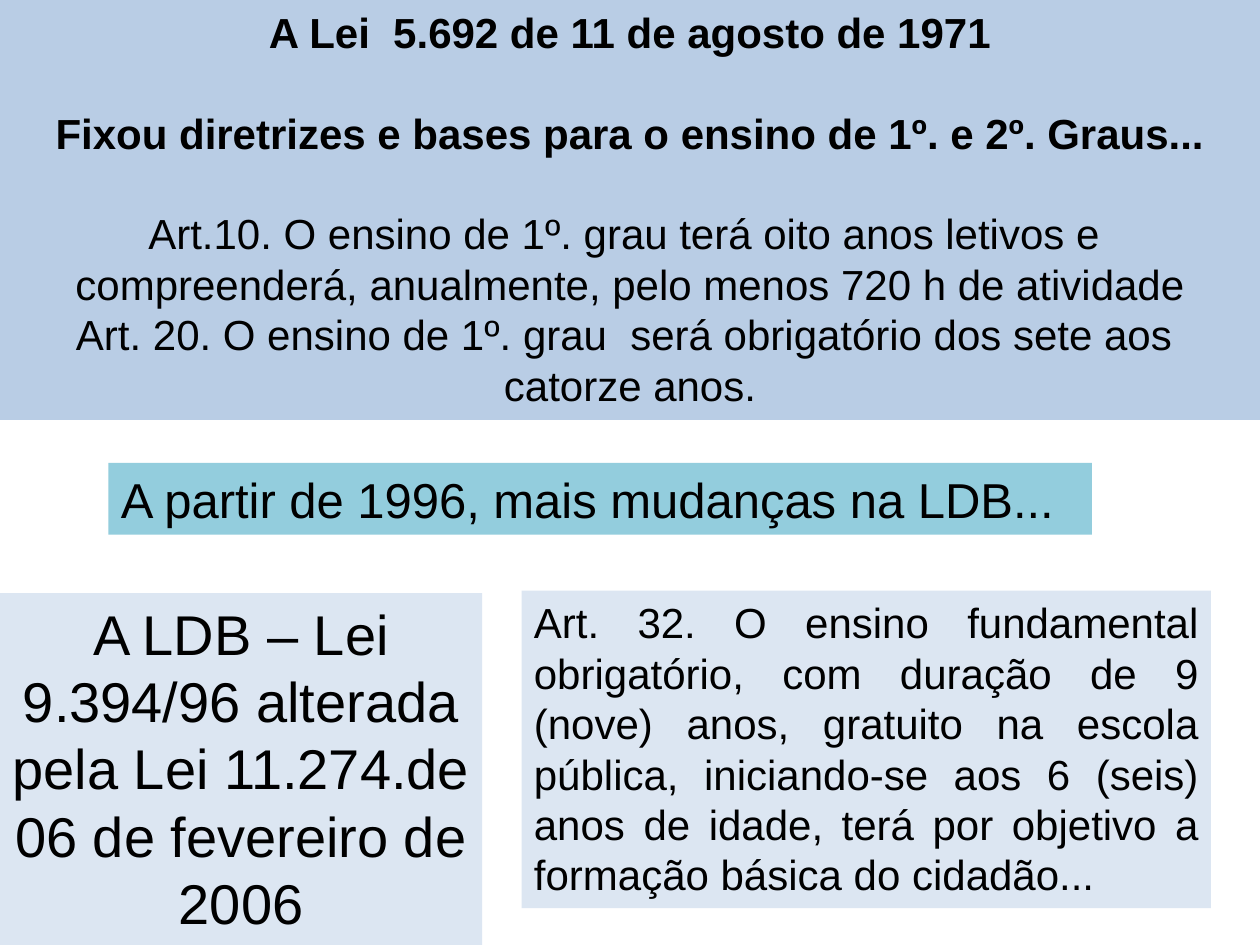
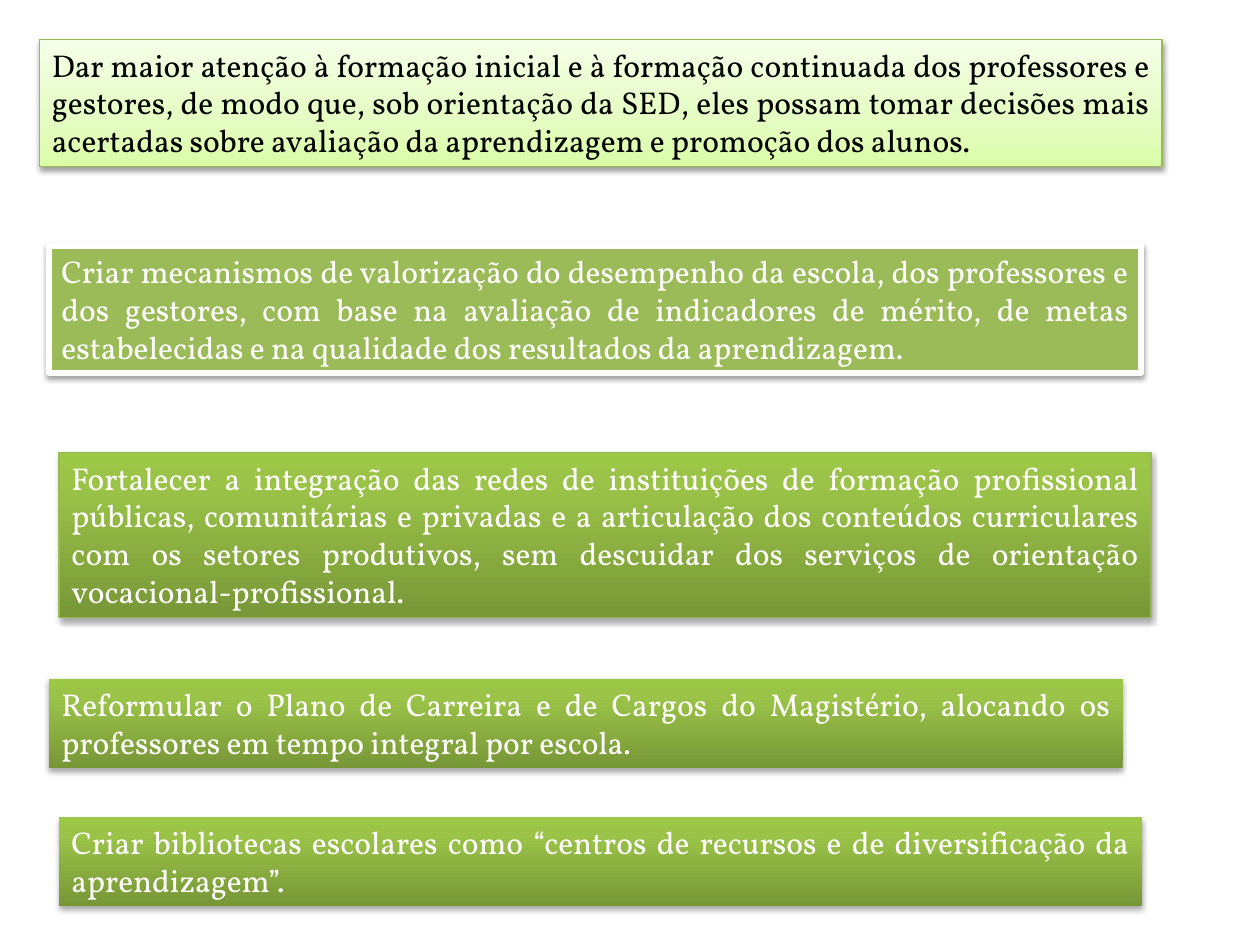
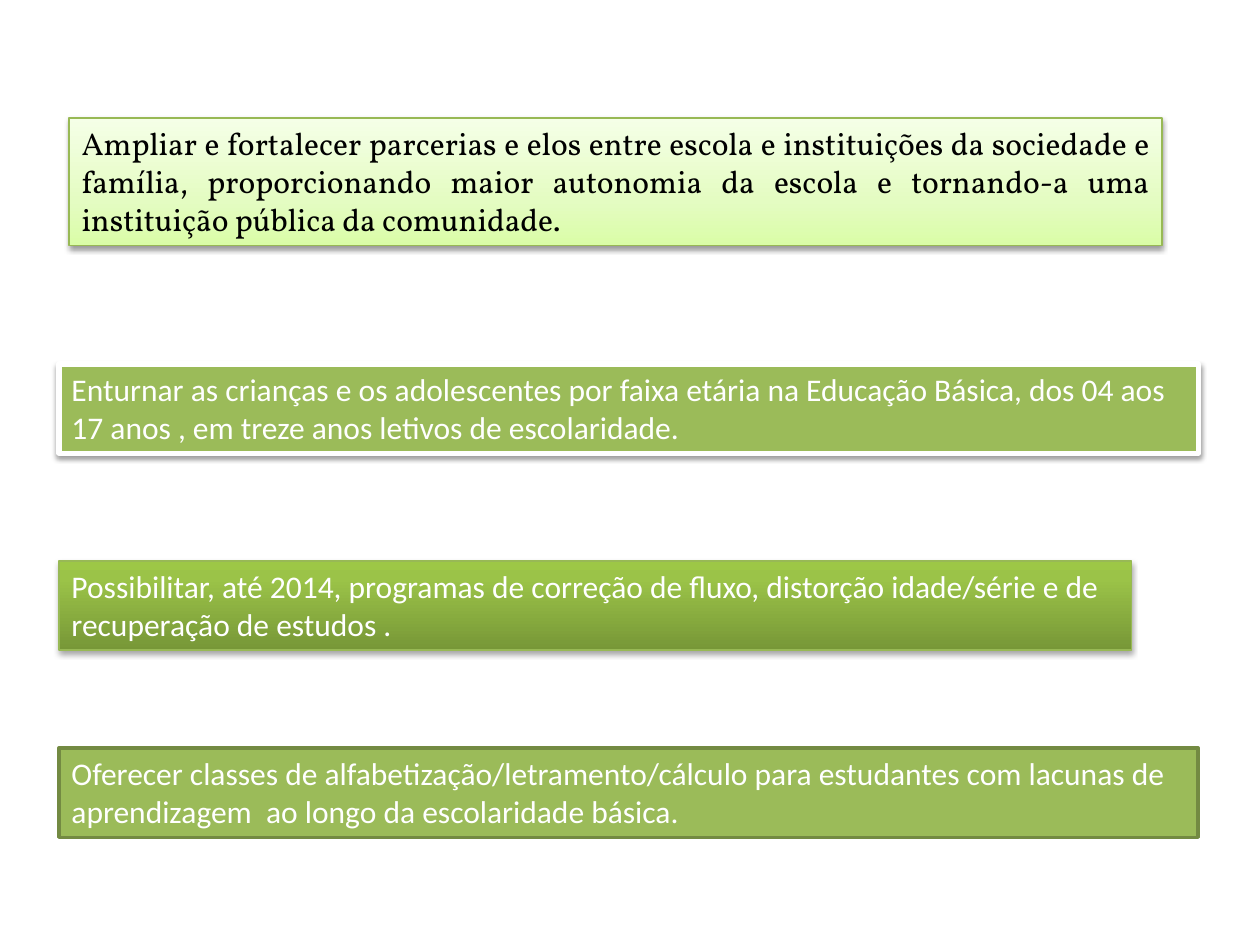
"""Builds three slides on Brazilian school law and education policy proposals."""
from lxml.etree import SubElement
from pptx import Presentation
from pptx.dml.color import RGBColor
from pptx.enum.text import MSO_ANCHOR, MSO_AUTO_SIZE, PP_ALIGN
from pptx.oxml.ns import qn
from pptx.util import Pt

BLACK, WHITE = "000000", "FFFFFF"
BLUE, PALE_BLUE, AQUA = "B9CDE5", "DCE6F2", "93CDDD"
GREEN, GREEN_EDGE, DARK_GREEN = "9BBB59", "98B955", "738A42"
LIGHT_FADE = [(0, "DAFDA7"), (35, "E4FCC2"), (100, "F5FFE7")]
DEEP_FADE = [(0, "779737"), (80, "9BC348"), (100, "9DC746")]
SOFT_SHADOW, STRONG_SHADOW = (38, 1.6), (35, 1.8)

PALE = dict(fill=LIGHT_FADE, line=(GREEN_EDGE, 0.75), shadow=SOFT_SHADOW, color=BLACK)
FRAMED = dict(fill=GREEN, line=(WHITE, 3), shadow=SOFT_SHADOW, color=WHITE)
DEEP = dict(fill=DEEP_FADE, shadow=STRONG_SHADOW, color=WHITE)
DEEP_EDGED = dict(DEEP, line=(GREEN_EDGE, 0.75))
OUTLINED = dict(fill=GREEN, line=(DARK_GREEN, 2), color=WHITE)


def rgb(hex_color):
    """Turn a hex string into a colour."""
    return RGBColor.from_string(hex_color)


class Deck:
    """Holds the presentation, its shared style and the current slide."""

    def __init__(self):
        """Start an empty 4:3 presentation."""
        self.presentation = Presentation()
        self.presentation.slide_width = Pt(720)
        self.presentation.slide_height = Pt(540)
        self.slide = None

    def new_slide(self):
        """Add a blank slide and make it current."""
        self.slide = self.presentation.slides.add_slide(self.presentation.slide_layouts[6])

    def panel(self, place, fill, line=None, shadow=None, wrap=True):
        """Add a filled text panel and return its text frame."""
        panel = self.slide.shapes.add_textbox(*map(Pt, place))
        if isinstance(fill, str):
            panel.fill.solid()
            panel.fill.fore_color.rgb = rgb(fill)
        else:
            self.fade(panel, fill)
        if line:
            panel.line.color.rgb = rgb(line[0])
            panel.line.width = Pt(line[1])
        if shadow:
            self.cast_shadow(panel, *shadow)
        frame = panel.text_frame
        frame.word_wrap = wrap
        frame.auto_size = MSO_AUTO_SIZE.SHAPE_TO_FIT_TEXT
        frame.vertical_anchor = MSO_ANCHOR.TOP
        return frame

    def fade(self, panel, stops):
        """Fill a panel with a gradient that runs from bottom to top."""
        panel.fill.gradient()
        panel.fill.gradient_angle = 90
        stop_list = panel._element.spPr.find(qn("a:gradFill")).find(qn("a:gsLst"))
        for default_stop in list(stop_list):
            stop_list.remove(default_stop)
        for percent, color in stops:
            stop = SubElement(stop_list, qn("a:gs"), pos=str(percent * 1000))
            SubElement(stop, qn("a:srgbClr"), val=color)

    def cast_shadow(self, panel, opacity, distance):
        """Give a panel a soft shadow straight below it."""
        effects = SubElement(panel._element.spPr, qn("a:effectLst"))
        outer = SubElement(effects, qn("a:outerShdw"), blurRad=str(Pt(3.1)),
                           dist=str(Pt(distance)), dir="5400000", rotWithShape="0")
        color = SubElement(outer, qn("a:srgbClr"), val=BLACK)
        SubElement(color, qn("a:alpha"), val=str(opacity * 1000))

    def add_lines(self, frame, lines, size, font="Arial", color=BLACK,
                  align=PP_ALIGN.LEFT, bold_lines=0, gaps=()):
        """Add one paragraph per line, with a line's gap before the chosen ones."""
        for index, words in enumerate(lines):
            paragraph = frame.paragraphs[0] if index == 0 else frame.add_paragraph()
            paragraph.alignment = align
            if index in gaps:
                paragraph.space_before = Pt(size * 1.2)
            run = paragraph.add_run()
            run.text = words
            run.font.size = Pt(size)
            run.font.name = font
            run.font.bold = index < bold_lines
            run.font.color.rgb = rgb(color)

    def proposal(self, place, look, *lines):
        """Add a proposal: one justified paragraph, or lines broken by hand."""
        style = dict(look)
        color = style.pop("color")
        single = len(lines) == 1
        frame = self.panel(place, wrap=single, **style)
        self.add_lines(frame, lines, 18, "Vollkorn" if single else "Calibri", color,
                       PP_ALIGN.JUSTIFY if single else PP_ALIGN.LEFT)


def add_laws(deck):
    """Compare the 1971 law with the changes made since 1996."""
    deck.new_slide()
    law_1971 = deck.panel((0, 0, 720, 240), BLUE)
    deck.add_lines(law_1971, [
        "A Lei  5.692 de 11 de agosto de 1971",
        "Fixou diretrizes e bases para o ensino de 1º. e 2º. Graus...",
        "Art.10. O ensino de 1º. grau terá oito anos letivos e ",
        "compreenderá, anualmente, pelo menos 720 h de atividade",
        "Art. 20. O ensino de 1º. grau  será obrigatório dos sete aos ",
        "catorze anos.",
    ], 24, align=PP_ALIGN.CENTER, bold_lines=2, gaps=(1, 2))
    ldb = deck.panel((0, 339, 275.5, 201), PALE_BLUE)
    deck.add_lines(
        ldb, ["A LDB – Lei 9.394/96 alterada pela Lei 11.274.de 06 de fevereiro de 2006"],
        32, align=PP_ALIGN.CENTER)
    article_32 = deck.panel((298, 337.5, 394, 181.5), PALE_BLUE)
    deck.add_lines(article_32, [
        "Art. 32. O ensino fundamental obrigatório, com duração de 9 (nove) anos, "
        "gratuito na escola pública, iniciando-se aos 6 (seis) anos de idade, "
        "terá por objetivo a formação básica do cidadão..."], 24, align=PP_ALIGN.JUSTIFY)
    since_1996 = deck.panel((62, 264.5, 562, 41), AQUA, wrap=False)
    deck.add_lines(since_1996, ["A partir de 1996, mais mudanças na LDB..."], 28)


def add_staff_proposals(deck):
    """List the proposals on teachers, managers and school resources."""
    deck.new_slide()
    deck.proposal(
        (22.5, 22.5, 641.5, 72.7), PALE,
        "Dar maior atenção à formação inicial e à formação continuada dos professores e "
        "gestores, de modo que, sob orientação da SED, eles possam tomar decisões mais "
        "acertadas sobre avaliação da aprendizagem e promoção dos alunos. ")
    deck.proposal(
        (28, 140.5, 624, 72.7), FRAMED,
        "Criar mecanismos de valorização do desempenho da escola, dos professores e dos "
        "gestores, com base na avaliação de indicadores de mérito, de metas estabelecidas "
        "e na qualidade dos resultados da aprendizagem.")
    deck.proposal(
        (33.75, 258.5, 624, 94.5), DEEP_EDGED,
        "Fortalecer a integração das redes de instituições de formação profissional "
        "públicas, comunitárias e privadas e a articulação dos conteúdos curriculares com "
        "os setores produtivos, sem descuidar dos serviços de orientação "
        "vocacional-profissional. ")
    deck.proposal(
        (28, 388, 613.5, 51), DEEP,
        "Reformular o Plano de Carreira e de Cargos do Magistério, alocando os professores "
        "em tempo integral por escola.")
    deck.proposal(
        (33.75, 466.75, 618.75, 51), DEEP,
        "Criar bibliotecas escolares como “centros de recursos e de diversificação da "
        "aprendizagem”.")


def add_student_proposals(deck):
    """List the proposals on partnerships and student progress."""
    deck.new_slide()
    deck.proposal(
        (39.5, 67.5, 624.5, 72.7), PALE,
        "Ampliar e fortalecer parcerias e elos entre escola e instituições da sociedade e "
        "família, proporcionando maior autonomia da escola e tornando-a uma instituição "
        "pública da comunidade.")
    deck.proposal(
        (33.75, 208, 651, 51), FRAMED,
        "Enturnar as crianças e os adolescentes por faixa etária na Educação Básica, dos 04 aos",
        "17 anos , em treze anos letivos de escolaridade.")
    deck.proposal(
        (33.75, 320.5, 613, 51), DEEP_EDGED,
        "Possibilitar, até 2014, programas de correção de fluxo, distorção idade/série e de",
        "recuperação de estudos .")
    deck.proposal(
        (33.75, 427.5, 651, 51), OUTLINED,
        "Oferecer classes de alfabetização/letramento/cálculo para estudantes com lacunas de",
        "aprendizagem  ao longo da escolaridade básica.")


def main():
    """Build the slides and save the presentation."""
    deck = Deck()
    add_laws(deck)
    add_staff_proposals(deck)
    add_student_proposals(deck)
    deck.presentation.save("out.pptx")


if __name__ == "__main__":
    main()
